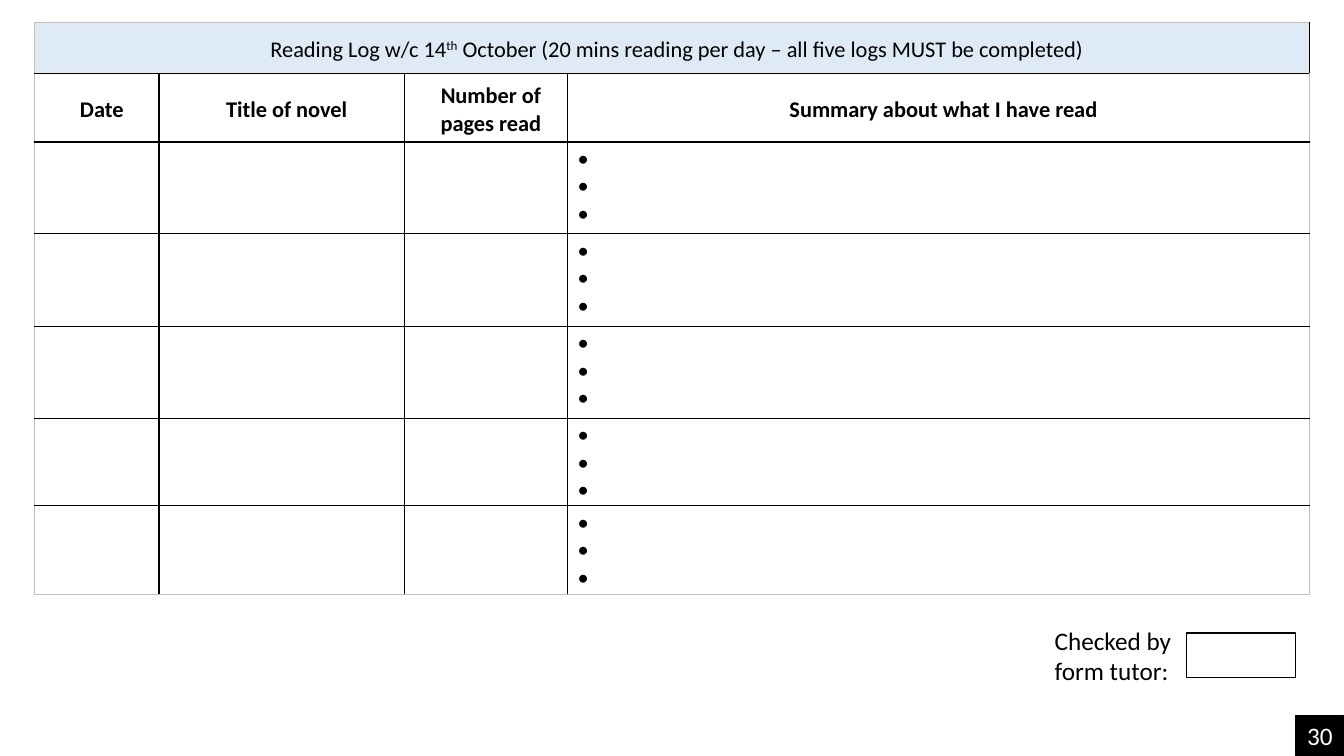
from pptx import Presentation
from pptx.dml.color import RGBColor
from pptx.enum.shapes import MSO_SHAPE
from pptx.enum.text import MSO_ANCHOR, PP_ALIGN
from pptx.oxml import parse_xml
from pptx.oxml.ns import nsdecls
from pptx.util import Inches, Pt

BLACK = RGBColor(0x00, 0x00, 0x00)
WHITE = RGBColor(0xFF, 0xFF, 0xFF)
PALE_BLUE = RGBColor(0xDE, 0xEB, 0xF7)
GREY = RGBColor(0xBF, 0xBF, 0xBF)

SLIDE_WIDTH, SLIDE_HEIGHT = Inches(13.33), Inches(7.5)
COLUMN_SHARES = [9.3, 18.23, 12.15, 55.21]
ROW_SHARES = [6.8, 9.07, 12.13, 12.27, 12.13, 11.6, 11.73]
HEADINGS = ["Date", "Title of novel", "Number of\npages read",
            "Summary about what I have read"]
TITLE_RUNS = [("Reading Log w/c 14", False), ("th", True),
              (" October (20 mins reading per day – all five logs MUST be completed)", False)]
BULLET_SPACING = [2.4, 0.1, 0]
OUTER, THIN, THICK = (GREY, 0.75), (BLACK, 1), (BLACK, 1.5)


def across(percent):
    """Turn a percentage of the slide width into a length."""
    return round(SLIDE_WIDTH * percent / 100)


def down(percent):
    """Turn a percentage of the slide height into a length."""
    return round(SLIDE_HEIGHT * percent / 100)


def area(left, top, width, height):
    """Place an area given in percentages of the slide."""
    return across(left), down(top), across(width), down(height)


def add_run(paragraph, text, size=16, color=BLACK, bold=False, raised=False):
    """Add one run in the slide's font."""
    run = paragraph.add_run()
    run.text = text
    run.font.name = "Calibri"
    run.font.size = Pt(size)
    run.font.bold = bold
    run.font.color.rgb = color
    if raised:
        run.font._element.set("baseline", "30000")


def add_lines(paragraph, text, **style):
    """Add text whose lines are parted by line breaks."""
    for number, line in enumerate(text.split("\n")):
        if number:
            paragraph.add_line_break()
        add_run(paragraph, line, **style)


def set_insets(holder, top):
    """Clear the insets except for the top one."""
    holder.margin_left = holder.margin_right = holder.margin_bottom = 0
    holder.margin_top = Inches(top)


def indent(paragraph, before):
    """Indent a paragraph and set the space before it."""
    paragraph._p.get_or_add_pPr().set("marL", str(Inches(0.1)))
    paragraph.space_before = Pt(before)


def edge_style(index, last, thick_edges):
    """Choose the line for one edge of the table grid."""
    if index in (0, last):
        return OUTER
    return THICK if index in thick_edges else THIN


def draw_borders(cell, row, column):
    """Draw the four borders of a cell."""
    edges = [("lnL", edge_style(column, len(COLUMN_SHARES), [1])),
             ("lnR", edge_style(column + 1, len(COLUMN_SHARES), [1])),
             ("lnT", edge_style(row, len(ROW_SHARES), [1, 2])),
             ("lnB", edge_style(row + 1, len(ROW_SHARES), [1, 2]))]
    properties = cell._tc.get_or_add_tcPr()
    for position, (tag, (color, width)) in enumerate(edges):
        properties.insert(position, parse_xml(
            f'<a:{tag} {nsdecls("a")} w="{Pt(width)}"><a:solidFill>'
            f'<a:srgbClr val="{color}"/></a:solidFill></a:{tag}>'))


def fill_title(cell):
    """Write the title across the top of the log."""
    cell.fill.solid()
    cell.fill.fore_color.rgb = PALE_BLUE
    cell.vertical_anchor = MSO_ANCHOR.MIDDLE
    paragraph = cell.text_frame.paragraphs[0]
    paragraph.alignment = PP_ALIGN.CENTER
    indent(paragraph, 2.3)
    for text, raised in TITLE_RUNS:
        add_run(paragraph, text, raised=raised)


def fill_heading(cell, heading):
    """Write one column heading."""
    cell.vertical_anchor = MSO_ANCHOR.MIDDLE
    paragraph = cell.text_frame.paragraphs[0]
    paragraph.alignment = PP_ALIGN.CENTER
    indent(paragraph, 2.7)
    add_lines(paragraph, heading, bold=True)


def fill_summary(cell):
    """Write the three empty bullets of a day's summary."""
    frame = cell.text_frame
    for number, before in enumerate(BULLET_SPACING):
        paragraph = frame.add_paragraph() if number else frame.paragraphs[0]
        indent(paragraph, before)
        add_run(paragraph, "•")


def add_reading_log(slide):
    """Add the reading log table."""
    log = slide.shapes.add_table(
        len(ROW_SHARES), len(COLUMN_SHARES),
        *area(2.55, 2.93, sum(COLUMN_SHARES), sum(ROW_SHARES))).table
    log.first_row = log.horz_banding = False
    for column, share in zip(log.columns, COLUMN_SHARES):
        column.width = across(share)
    for row_number, (row, share) in enumerate(zip(log.rows, ROW_SHARES)):
        row.height = down(share)
        for column_number, cell in enumerate(row.cells):
            cell.fill.background()
            set_insets(cell, 0.04 if row_number == 1 else 0.03)
            draw_borders(cell, row_number, column_number)
    title = log.cell(0, 0)
    title.merge(log.cell(0, len(COLUMN_SHARES) - 1))
    fill_title(title)
    for column_number, heading in enumerate(HEADINGS):
        fill_heading(log.cell(1, column_number), heading)
    for row_number in range(2, len(ROW_SHARES)):
        fill_summary(log.cell(row_number, len(COLUMN_SHARES) - 1))


def add_box(slide, place, line_width, fill=None):
    """Add a black-edged rectangle, filled if a colour is given."""
    box = slide.shapes.add_shape(MSO_SHAPE.RECTANGLE, *place)
    box.shadow.inherit = False
    box.line.color.rgb = BLACK
    box.line.width = Pt(line_width)
    if fill is None:
        box.fill.background()
    else:
        box.fill.solid()
        box.fill.fore_color.rgb = fill
    return box


def add_tutor_label(slide):
    """Add the label beside the tutor's box."""
    frame = slide.shapes.add_textbox(*area(78.47, 82.53, 11.7, 8.27)).text_frame
    frame.word_wrap = True
    set_insets(frame, 0.01)
    paragraph = frame.paragraphs[0]
    paragraph.space_before = Pt(1)
    add_lines(paragraph, "Checked by\nform tutor:", size=18)


def add_page_number(slide):
    """Add the page number in the corner."""
    badge = add_box(slide, area(96.4, 94.67, 3.6, 5.33), 0.75, BLACK)
    paragraph = badge.text_frame.paragraphs[0]
    paragraph.alignment = PP_ALIGN.CENTER
    add_run(paragraph, "30", size=18, color=WHITE)


def main():
    """Build and save the reading log slide."""
    presentation = Presentation()
    presentation.slide_width, presentation.slide_height = SLIDE_WIDTH, SLIDE_HEIGHT
    slide = presentation.slides.add_slide(presentation.slide_layouts[6])
    add_reading_log(slide)
    add_box(slide, area(88.3, 83.73, 8.1, 5.87), 0.96)
    add_tutor_label(slide)
    add_page_number(slide)
    presentation.save("out.pptx")


if __name__ == "__main__":
    main()
